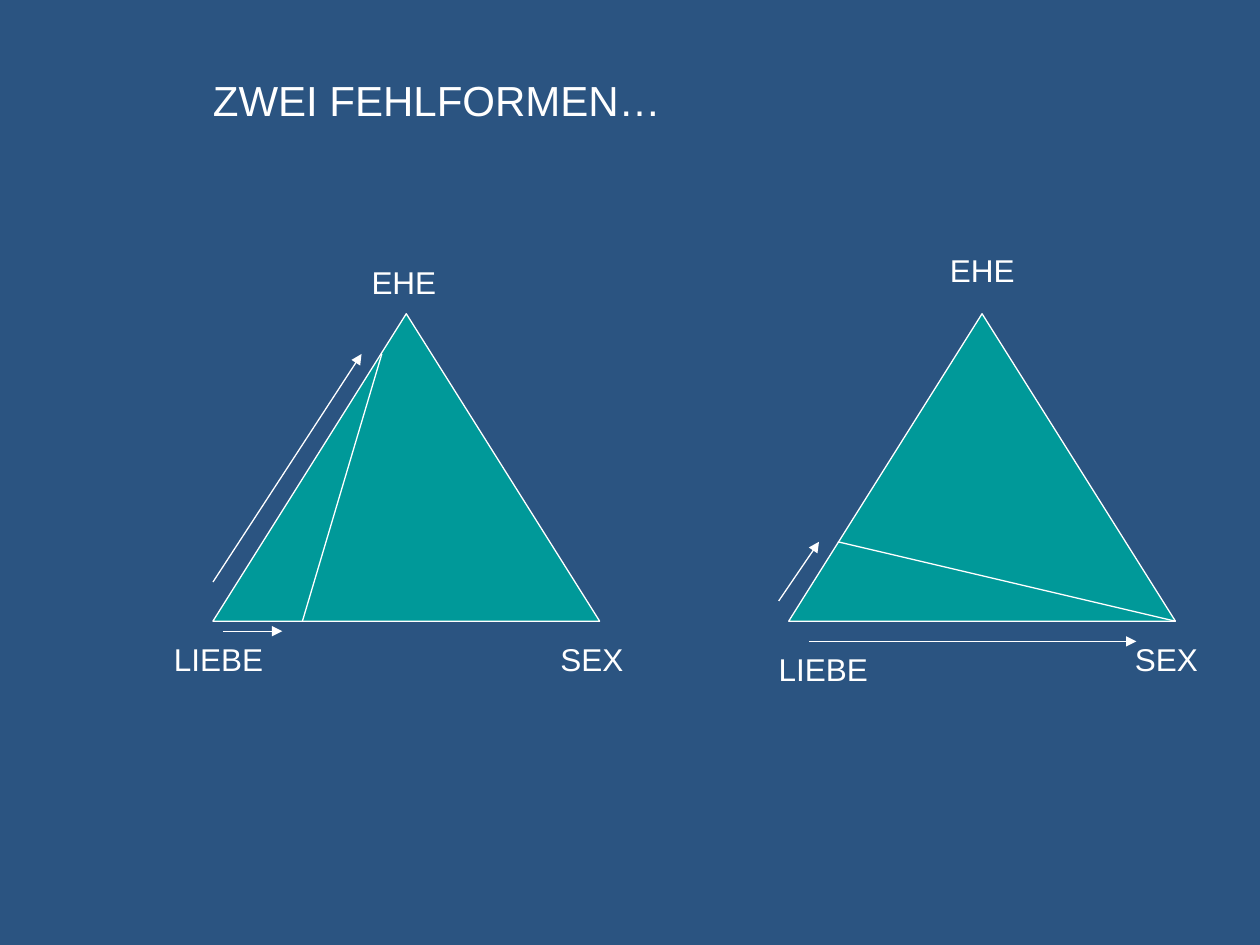
from lxml.etree import SubElement
from pptx import Presentation
from pptx.dml.color import RGBColor
from pptx.enum.shapes import MSO_CONNECTOR as CONN, MSO_SHAPE as SHAPE
from pptx.enum.text import MSO_ANCHOR as ANCHOR, MSO_AUTO_SIZE as AUTO, PP_ALIGN as ALIGN
from pptx.oxml.ns import qn
from pptx.util import Pt


def rgb(value):
    return RGBColor.from_string(value)


class Deck:
    back, accent, light = "2B5481", "009999", "FFFFFF"
    font, line_width = "Arial", 0.75

    def __init__(self, prs):
        self.s = prs.slides.add_slide(prs.slide_layouts[5])
        fill = self.s.background.fill
        fill.solid()
        fill.fore_color.rgb = rgb(self.back)

    def set_text(self, sp, text, size):
        tf = sp.text_frame
        frame = {"word_wrap": False, "auto_size": AUTO.SHAPE_TO_FIT_TEXT,
                 "vertical_anchor": ANCHOR.TOP}
        for name, value in frame.items():
            setattr(tf, name, value)
        p = tf.paragraphs[0]
        p.alignment = ALIGN.LEFT
        r = p.add_run()
        r.text = text
        for name, value in {"name": self.font, "size": Pt(size), "bold": False}.items():
            setattr(r.font, name, value)
        r.font.color.rgb = rgb(self.light)

    def title(self, text, x, y, w, h):
        sp = self.s.shapes.title
        box = {"left": x, "top": y, "width": w, "height": h}
        for name, value in box.items():
            setattr(sp, name, Pt(value))
        self.set_text(sp, text, 24)

    def label(self, text, x, y, w):
        sp = self.s.shapes.add_textbox(Pt(x), Pt(y), Pt(w), Pt(28.8))
        self.set_text(sp, text, 18)

    def outline(self, sp):
        sp.line.color.rgb = rgb(self.light)
        sp.line.width = Pt(self.line_width)

    def triangle(self, x, y, w, h):
        sp = self.s.shapes.add_shape(SHAPE.FLOWCHART_EXTRACT, Pt(x), Pt(y), Pt(w), Pt(h))
        sp.shadow.inherit = False
        sp.fill.solid()
        sp.fill.fore_color.rgb = rgb(self.accent)
        self.outline(sp)

    def line(self, x1, y1, x2, y2, arrow=False):
        sp = self.s.shapes.add_connector(CONN.STRAIGHT, Pt(x1), Pt(y1), Pt(x2), Pt(y2))
        self.outline(sp)
        if arrow:
            ln = sp._element.spPr.find(qn("a:ln"))
            SubElement(ln, qn("a:tailEnd"), type="triangle")
        SubElement(sp._element.spPr, qn("a:effectLst"))


def main():
    prs = Presentation()
    prs.slide_width, prs.slide_height = Pt(720), Pt(540)
    deck = Deck(prs)
    deck.title("ZWEI FEHLFORMEN…", 114.5, 38.9, 270.7, 36)

    top, width, height = 179.3, 221, 175.7
    base = top + height
    left, right = 121.7, 450.7
    for x in (left, right):
        deck.triangle(x, top, width, height)

    deck.line(218.2, 202.3, 172.8, base)
    deck.line(478.8, 309.6, right + width, base)

    labels = [
        ("LIEBE", 65.5, (92.2, 362.2), (437.8, 367.9)),
        ("SEX", 50.4, (313.2, 362.2), (641.5, 362.2)),
        ("EHE", 51.8, (205.2, 146.9), (535.7, 139.7)),
    ]
    for text, w, *places in labels:
        for x, y in places:
            deck.label(text, x, y, w)

    arrows = [
        (127.4, 360.7, 161.3, 360.7),
        (left, 332.6, 206.6, 202.3),
        (445, 343.4, 468, 309.6),
        (462.2, 366.5, 649.4, 366.5),
    ]
    for ends in arrows:
        deck.line(*ends, arrow=True)

    prs.save("out.pptx")


if __name__ == "__main__":
    main()
